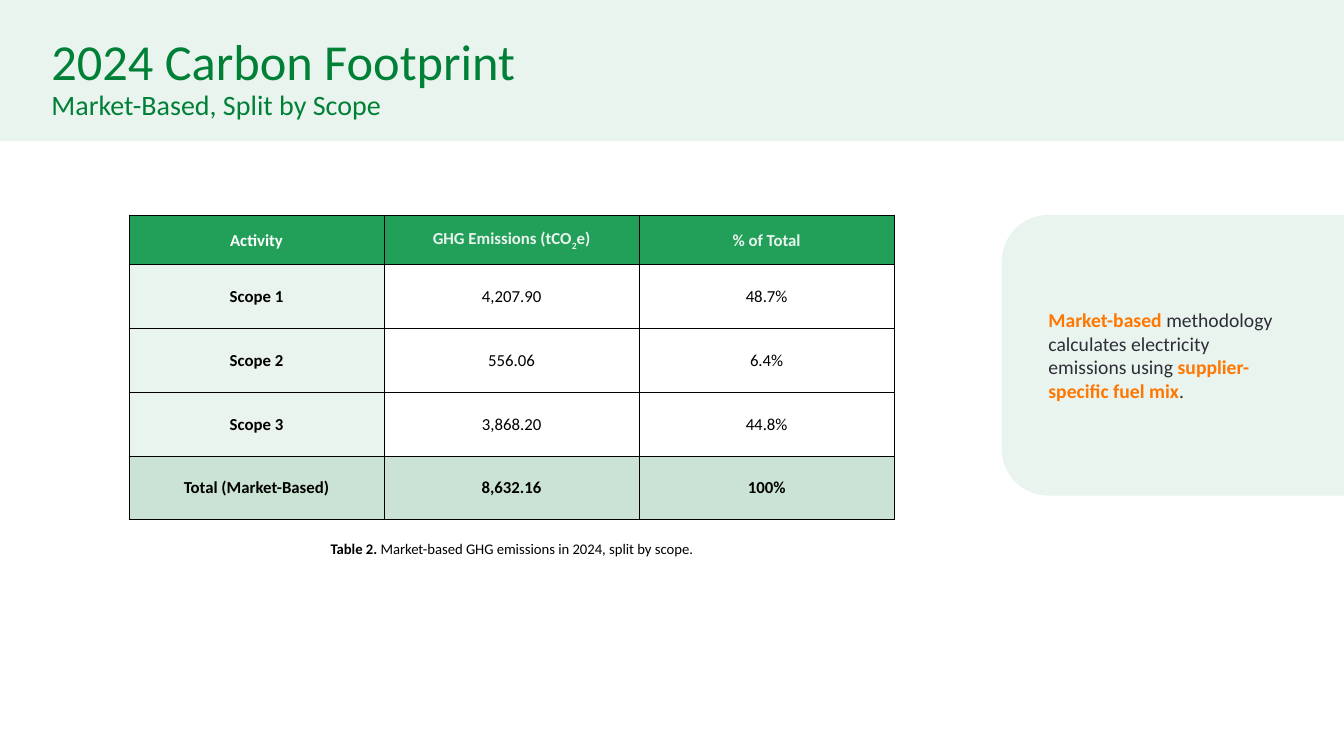
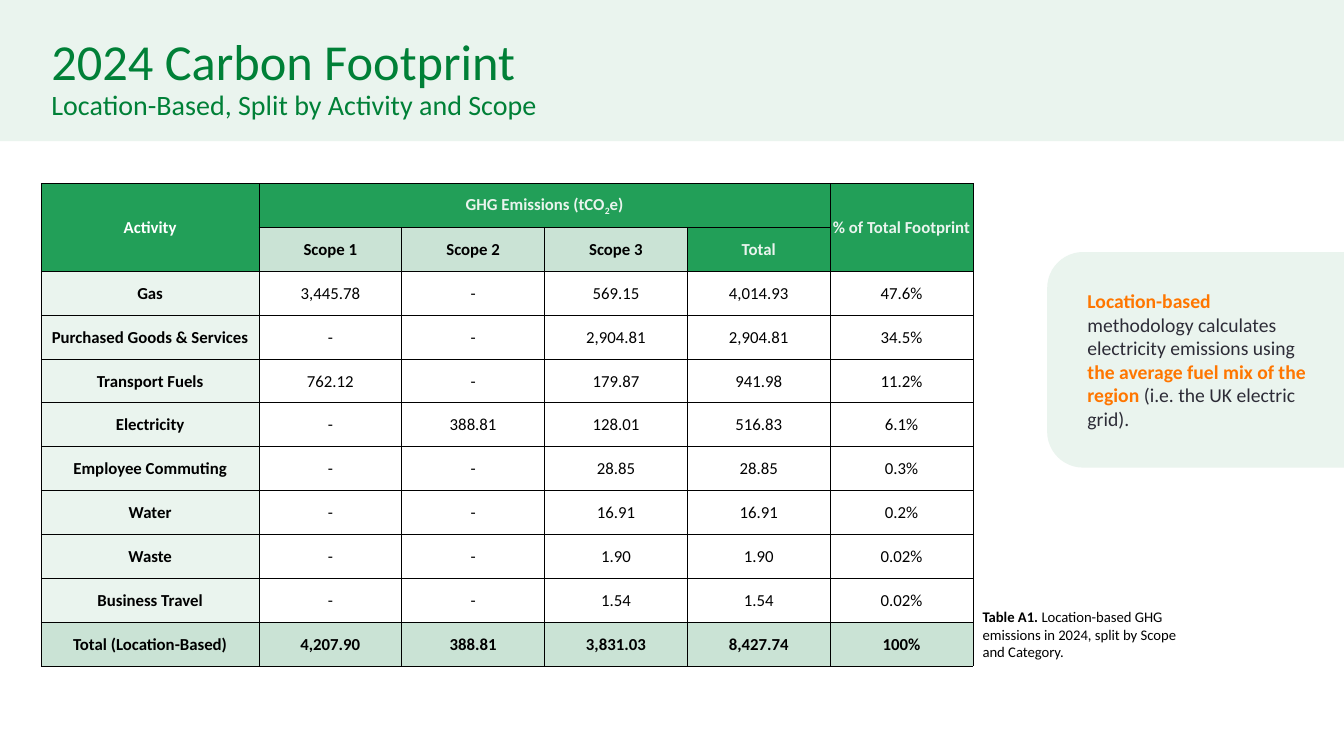
import lxml.etree
import pptx
import pptx.dml.color
import pptx.enum.shapes
import pptx.enum.text
import pptx.oxml.ns
import pptx.util

Pt = pptx.util.Pt
RGBColor = pptx.dml.color.RGBColor
PP_ALIGN = pptx.enum.text.PP_ALIGN
MSO_ANCHOR = pptx.enum.text.MSO_ANCHOR
MSO_AUTO_SIZE = pptx.enum.text.MSO_AUTO_SIZE
MSO_SHAPE = pptx.enum.shapes.MSO_SHAPE
qn = pptx.oxml.ns.qn

FONT = "Calibri"
MINT = RGBColor(0xEA, 0xF4, 0xEE)
SAGE = RGBColor(0xCA, 0xE3, 0xD5)
GREEN = RGBColor(0x22, 0x9F, 0x58)
TITLE_GREEN = RGBColor(0x00, 0x80, 0x37)
ORANGE = RGBColor(0xFF, 0x76, 0x00)
INK = RGBColor(0x2D, 0x2C, 0x37)
BLACK = RGBColor(0x00, 0x00, 0x00)
WHITE = RGBColor(0xFF, 0xFF, 0xFF)

SLIDE_WIDTH = 960
SLIDE_HEIGHT = 540
BAND_HEIGHT = 100.8

SLIDES = [
    {
        "subtitle": "Market-Based, Split by Scope",
        "table_at": (92.16, 153.6),
        "columns": [182.2] * 3,
        "row_heights": [35.5] + [45.5] * 4,
        "header_rows": 1,
        "merges": [],
        "rows": [
            ["Activity", "GHG Emissions (tCO₂e)", "% of Total"],
            ["Scope 1", "4,207.90", "48.7%"],
            ["Scope 2", "556.06", "6.4%"],
            ["Scope 3", "3,868.20", "44.8%"],
            ["Total (Market-Based)", "8,632.16", "100%"],
        ],
        "caption": ("Table 2. ", "Market-based GHG emissions in 2024, split by scope."),
        "caption_box": (200.4, 382, 330.48, 20.16),
        "caption_align": PP_ALIGN.CENTER,
        "panel": (715.5, 153.5, 244.5, 200.5),
        "note_left": 741.8,
        "note_width": 187.92,
        "note": [
            ("Market-based ", True),
            ("methodology calculates electricity emissions using ", False),
            ("supplier-specific fuel mix", True),
            (".", False),
        ],
    },
    {
        "subtitle": "Location-Based, Split by Activity and Scope",
        "table_at": (29.52, 131.04),
        "columns": [155.5] + [102] * 5,
        "row_heights": [31.35] * 11,
        "header_rows": 2,
        "merges": [(0, 0, 1, 0), (0, 1, 0, 4), (0, 5, 1, 5)],
        "rows": [
            ["Activity", "GHG Emissions (tCO₂e)", "", "", "", "% of Total Footprint"],
            ["", "Scope 1", "Scope 2", "Scope 3", "Total", ""],
            ["Gas", "3,445.78", "-", "569.15", "4,014.93", "47.6%"],
            ["Purchased Goods & Services", "-", "-", "2,904.81", "2,904.81", "34.5%"],
            ["Transport Fuels", "762.12", "-", "179.87", "941.98", "11.2%"],
            ["Electricity", "-", "388.81", "128.01", "516.83", "6.1%"],
            ["Employee Commuting", "-", "-", "28.85", "28.85", "0.3%"],
            ["Water", "-", "-", "16.91", "16.91", "0.2%"],
            ["Waste", "-", "-", "1.90", "1.90", "0.02%"],
            ["Business Travel", "-", "-", "1.54", "1.54", "0.02%"],
            ["Total (Location-Based)", "4,207.90", "388.81", "3,831.03", "8,427.74", "100%"],
        ],
        "caption": (
            "Table A1. ",
            "Location-based GHG emissions in 2024, split by Scope and Category.",
        ),
        "caption_box": (694.8, 430.56, 162.72, 45.36),
        "caption_align": PP_ALIGN.LEFT,
        "panel": (748, 180, 212, 154),
        "note_left": 769.68,
        "note_width": 176.4,
        "note": [
            ("Location-based ", True),
            ("methodology calculates electricity emissions using ", False),
            ("the average fuel mix of the region", True),
            (" (i.e. the UK electric grid).", False),
        ],
    },
]


def add_run(paragraph, text, size=12, color=BLACK, bold=False, baseline=0):
    run = paragraph.add_run()
    run.text = text
    run.font.name = FONT
    run.font.size = Pt(size)
    run.font.color.rgb = color
    run.font.bold = bold
    if baseline:
        run.font._element.set("baseline", str(baseline * 1000))


def draw_borders(cell):
    """Give all four sides of a table cell a thin black line."""
    properties = cell._tc.get_or_add_tcPr()
    for side in ("a:lnL", "a:lnR", "a:lnT", "a:lnB"):
        line = lxml.etree.SubElement(properties, qn(side), w=str(Pt(0.5)))
        fill = lxml.etree.SubElement(line, qn("a:solidFill"))
        lxml.etree.SubElement(fill, qn("a:srgbClr"), val=str(BLACK))


presentation = pptx.Presentation()
presentation.slide_width = Pt(SLIDE_WIDTH)
presentation.slide_height = Pt(SLIDE_HEIGHT)

title_style = presentation.slide_master.element.find(".//" + qn("p:titleStyle"))
title_level = title_style.find(qn("a:lvl1pPr"))
title_level.set("algn", "l")
title_level.find(qn("a:defRPr")).set("sz", "3600")
title_only = presentation.slide_layouts[5]

for content in SLIDES:
    slide = presentation.slides.add_slide(title_only)

    # Title over its band
    title = slide.shapes.title
    title.left, title.top, title.width, title.height = map(Pt, (29.52, 23.04, 900.72, 47.52))
    title.text_frame.auto_size = MSO_AUTO_SIZE.NONE
    title.text_frame.vertical_anchor = MSO_ANCHOR.TOP
    paragraph = title.text_frame.paragraphs[0]
    paragraph.line_spacing = 0.9
    add_run(paragraph, "2024 Carbon Footprint", size=36, color=TITLE_GREEN)
    paragraph.add_line_break()
    add_run(paragraph, content["subtitle"], size=20, color=TITLE_GREEN)

    band = slide.shapes.add_shape(MSO_SHAPE.RECTANGLE, 0, 0, Pt(SLIDE_WIDTH), Pt(BAND_HEIGHT))
    title.element.addprevious(band.element)

    # Panel turned so that its rounded corners face left
    left, top, width, height = content["panel"]
    panel = slide.shapes.add_shape(
        MSO_SHAPE.ROUND_2_SAME_RECTANGLE,
        Pt(left + (width - height) / 2),
        Pt(top + (height - width) / 2),
        Pt(height),
        Pt(width),
    )
    panel.rotation = 270
    for shape in (band, panel):
        shape.shadow.inherit = False
        shape.fill.solid()
        shape.fill.fore_color.rgb = MINT
        shape.line.fill.background()

    note = slide.shapes.add_textbox(
        Pt(content["note_left"]), Pt(top), Pt(content["note_width"]), Pt(height)
    )
    note.text_frame.word_wrap = True
    note.text_frame.vertical_anchor = MSO_ANCHOR.MIDDLE
    for text, strong in content["note"]:
        add_run(
            note.text_frame.paragraphs[0],
            text,
            size=14,
            color=ORANGE if strong else INK,
            bold=strong,
        )

    # Table
    rows = content["rows"]
    columns = content["columns"]
    row_heights = content["row_heights"]
    table_left, table_top = content["table_at"]
    table = slide.shapes.add_table(
        len(rows),
        len(columns),
        Pt(table_left),
        Pt(table_top),
        Pt(sum(columns)),
        Pt(sum(row_heights)),
    ).table
    table.first_row = False
    table.horz_banding = False
    for column, column_width in zip(table.columns, columns):
        column.width = Pt(column_width)
    for row, row_height in zip(table.rows, row_heights):
        row.height = Pt(row_height)
    for first_row, first_column, last_row, last_column in content["merges"]:
        table.cell(first_row, first_column).merge(table.cell(last_row, last_column))

    for row_index, values in enumerate(rows):
        is_total = row_index == len(rows) - 1
        for column_index, value in enumerate(values):
            is_scope = value.startswith("Scope")
            is_header = row_index < content["header_rows"]
            fill, color, bold = None, BLACK, True
            if is_total or (is_header and is_scope):
                fill = SAGE
            elif is_header:
                fill = GREEN
                color = WHITE if column_index == 0 else MINT
            elif column_index == 0:
                fill = MINT
            else:
                bold = False

            cell = table.cell(row_index, column_index)
            cell.margin_left = cell.margin_right = cell.margin_top = Pt(0.7)
            cell.margin_bottom = 0
            cell.vertical_anchor = MSO_ANCHOR.MIDDLE
            draw_borders(cell)
            if fill is None:
                cell.fill.background()
            else:
                cell.fill.solid()
                cell.fill.fore_color.rgb = fill
            if cell.is_spanned:
                continue
            paragraph = cell.text_frame.paragraphs[0]
            paragraph.alignment = PP_ALIGN.CENTER
            before, subscript, after = value.partition("₂")
            add_run(paragraph, before, color=color, bold=bold)
            if subscript:
                add_run(paragraph, "2", color=color, bold=bold, baseline=-25)
                add_run(paragraph, after, color=color, bold=bold)

    # Caption
    caption = slide.shapes.add_textbox(*map(Pt, content["caption_box"]))
    caption.text_frame.word_wrap = True
    caption.text_frame.auto_size = MSO_AUTO_SIZE.SHAPE_TO_FIT_TEXT
    paragraph = caption.text_frame.paragraphs[0]
    paragraph.alignment = content["caption_align"]
    label, description = content["caption"]
    add_run(paragraph, label, size=10.5, bold=True)
    add_run(paragraph, description, size=10.5)

presentation.save("out.pptx")
